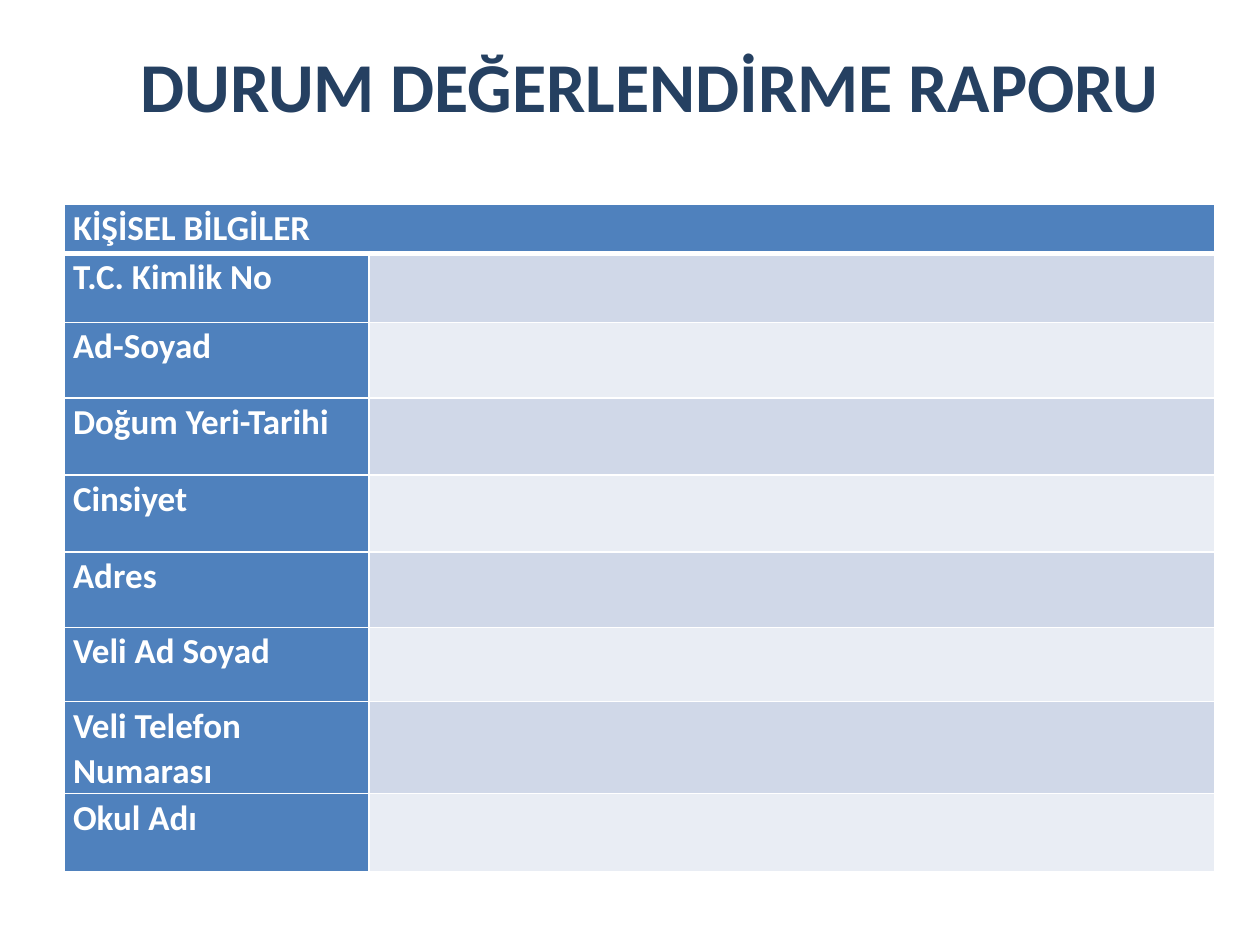
from dataclasses import dataclass, field

from lxml import etree
from pptx import Presentation
from pptx.dml.color import RGBColor
from pptx.enum.text import MSO_ANCHOR, MSO_AUTO_SIZE, PP_ALIGN
from pptx.oxml.ns import qn
from pptx.util import Inches, Pt

CENTER = PP_ALIGN.CENTER
LEFT = PP_ALIGN.LEFT
TOP = MSO_ANCHOR.TOP
GROW = MSO_AUTO_SIZE.SHAPE_TO_FIT_TEXT

COLORS = {
    "title": "254061",
    "label": "4F81BD",
    "band_dark": "D0D8E8",
    "band_light": "E9EDF4",
    "white": "FFFFFF",
}
HEADING = "KİŞİSEL BİLGİLER"
HEADING_HEIGHT = 0.39
FIELDS = {
    "T.C. Kimlik No": 0.55,
    "Ad-Soyad": 0.6,
    "Doğum Yeri-Tarihi": 0.61,
    "Cinsiyet": 0.61,
    "Adres": 0.6,
    "Veli Ad Soyad": 0.59,
    "Veli Telefon Numarası": 0.73,
    "Okul Adı": 0.62,
}
COLUMN_WIDTHS = (2.42, 6.71)


@dataclass
class ReportPage:
    """Hold the style and the current slide, and draw the elements of the report."""

    page: object
    font: str = "Calibri"
    margins: dict = field(default_factory=lambda: {
        "margin_left": Inches(0.07),
        "margin_right": Inches(0.07),
        "margin_top": 0,
        "margin_bottom": 0,
        "vertical_anchor": TOP,
    })

    def add_text(self, para, text, size, color, align=LEFT):
        para.alignment = align
        span = para.add_run()
        span.text = text
        formats = {"name": self.font, "size": Pt(size), "bold": True}
        for name, value in formats.items():
            setattr(span.font, name, value)
        span.font.color.rgb = RGBColor.from_string(COLORS[color])

    def title(self, text, left, top, width, height):
        box = self.page.shapes.add_textbox(*map(Inches, (left, top, width, height)))
        box.text_frame.word_wrap = True
        box.text_frame.auto_size = GROW
        self.add_text(box.text_frame.paragraphs[0], text, 40, "title", CENTER)

    def borders(self, cell, bottom):
        properties = cell._tc.get_or_add_tcPr()
        widths = {"a:lnL": 1, "a:lnR": 1, "a:lnT": 1, "a:lnB": bottom}
        for index, (tag, width) in enumerate(widths.items()):
            line = etree.Element(qn(tag), w=str(Pt(width)))
            fill = etree.SubElement(line, qn("a:solidFill"))
            etree.SubElement(fill, qn("a:srgbClr"), val=COLORS["white"])
            properties.insert(index, line)

    def cell(self, cell, color, text="", bottom=1):
        cell.fill.solid()
        cell.fill.fore_color.rgb = RGBColor.from_string(COLORS[color])
        self.borders(cell, bottom)
        if text:
            for name, value in self.margins.items():
                setattr(cell, name, value)
            para = cell.text_frame.paragraphs[0]
            para.line_spacing = 1.07
            self.add_text(para, text, 20, "white")

    def form(self, left, top):
        heights = [HEADING_HEIGHT, *FIELDS.values()]
        bounds = (left, top, sum(COLUMN_WIDTHS), sum(heights))
        table = self.page.shapes.add_table(
            len(heights), len(COLUMN_WIDTHS), *map(Inches, bounds)
        ).table
        table.horz_banding = False
        for column, width in zip(table.columns, COLUMN_WIDTHS):
            column.width = Inches(width)
        for row, height in zip(table.rows, heights):
            row.height = Inches(height)
        table.cell(0, 0).merge(table.cell(0, 1))
        self.cell(table.cell(0, 0), "label", HEADING, bottom=3)
        self.cell(table.cell(0, 1), "label", bottom=3)
        for number, label in enumerate(FIELDS, start=1):
            self.cell(table.cell(number, 0), "label", label)
            self.cell(table.cell(number, 1), "band_dark" if number % 2 else "band_light")


def main():
    deck = Presentation()
    deck.slide_width, deck.slide_height = Inches(10), Inches(7.5)
    report = ReportPage(deck.slides.add_slide(deck.slide_layouts[6]))
    report.form(0.51, 1.62)
    report.title("DURUM DEĞERLENDİRME RAPORU", 0.51, 0.29, 9.29, 0.77)
    deck.save("out.pptx")


if __name__ == "__main__":
    main()
